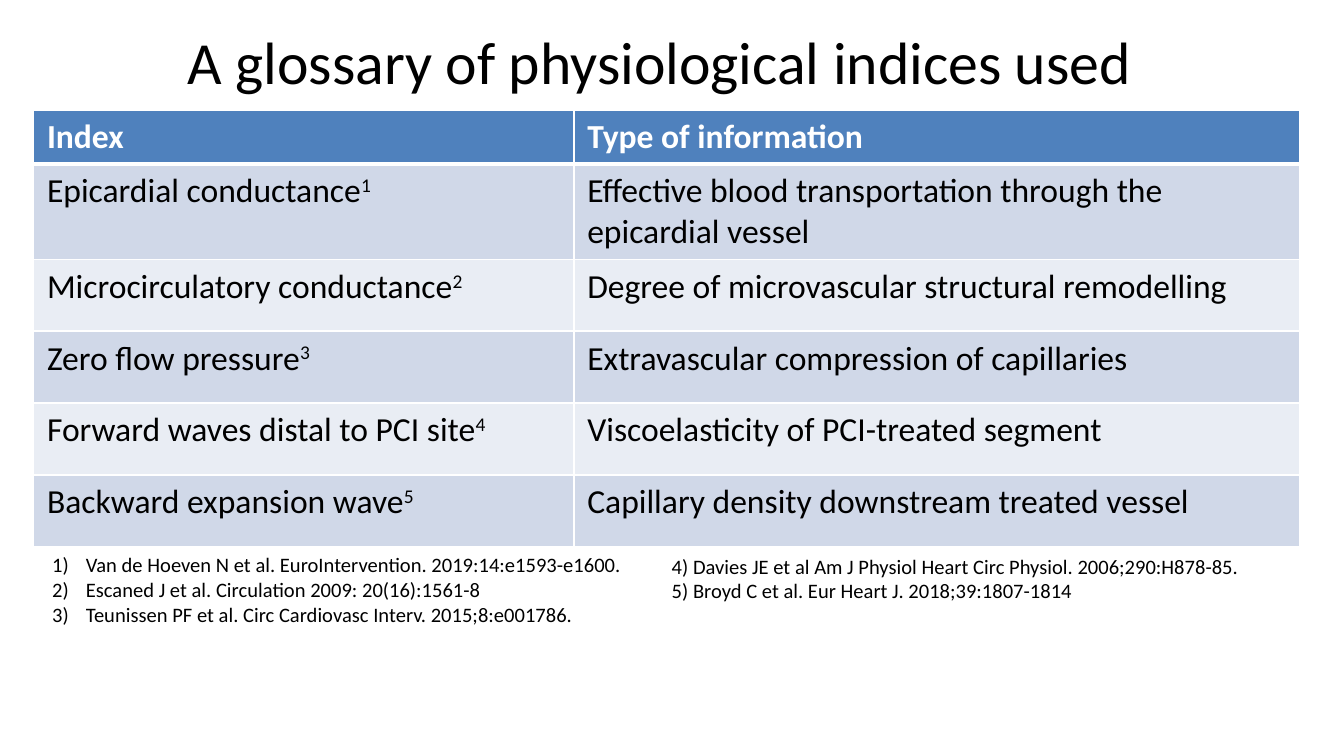
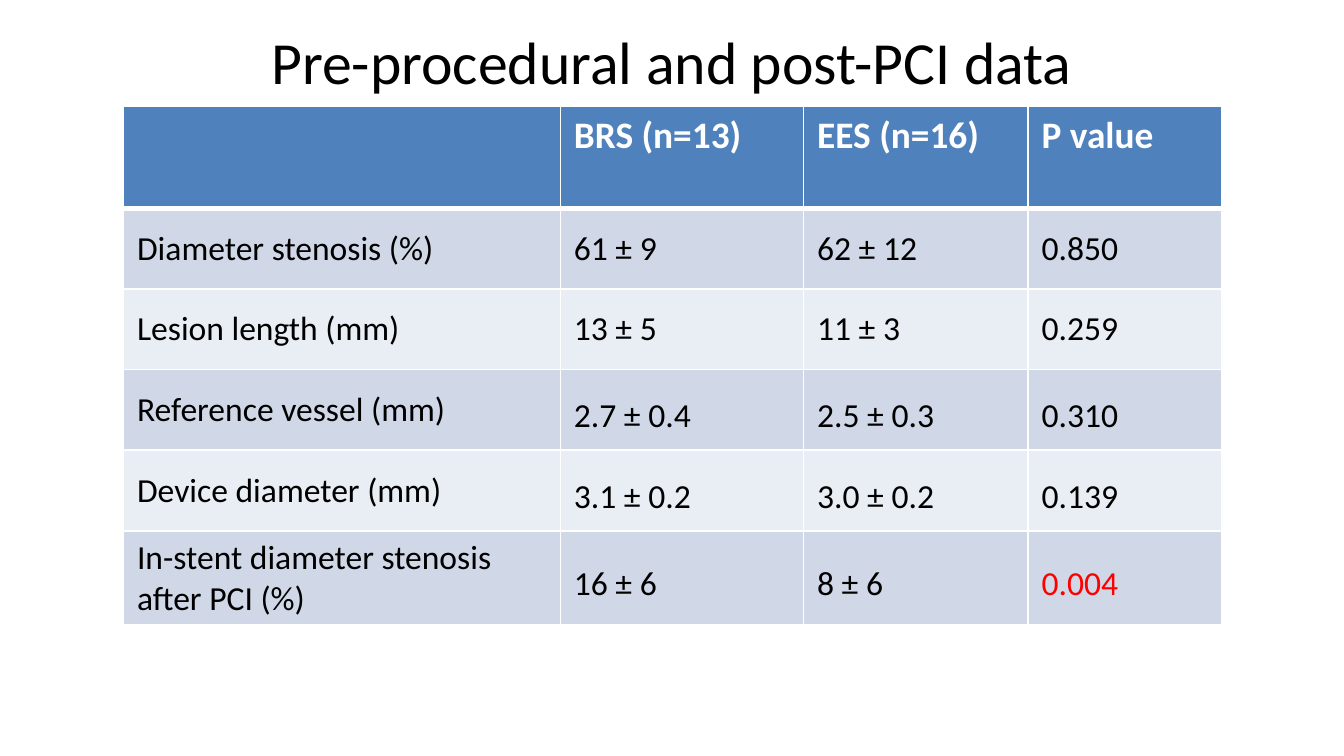
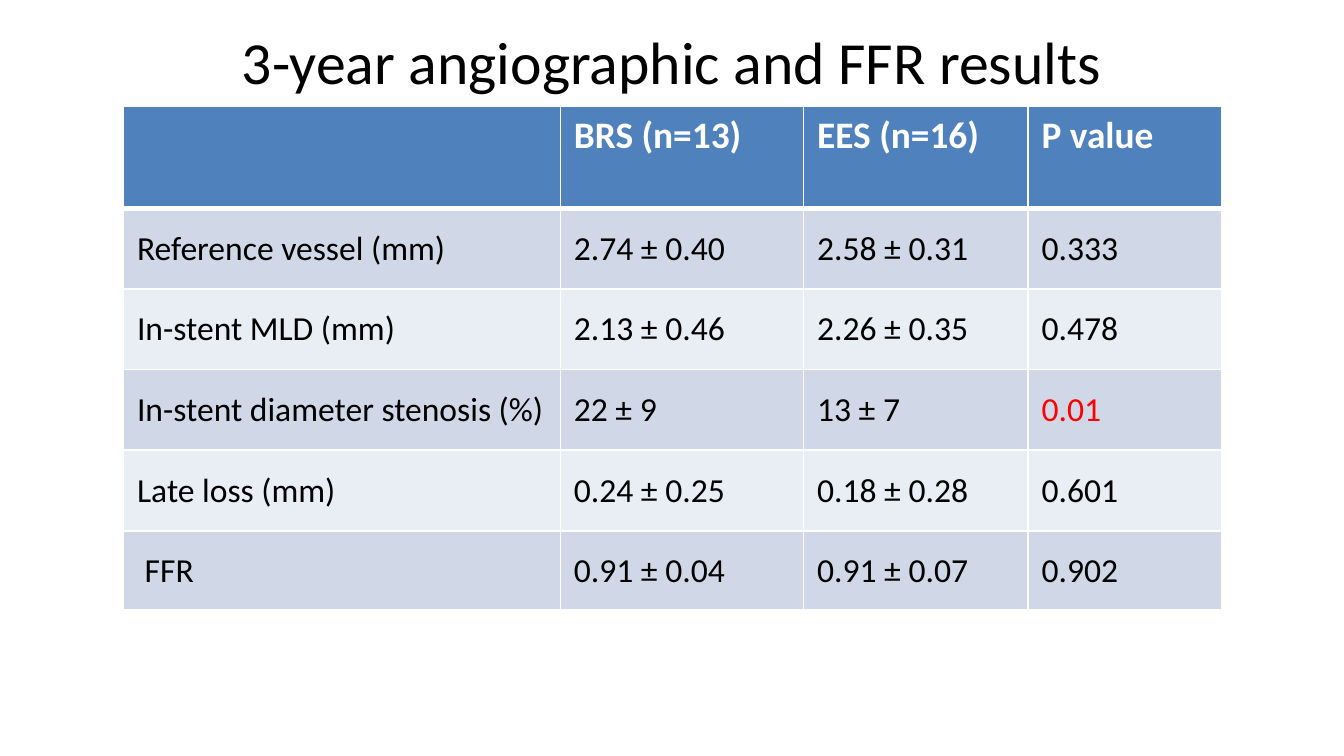
from lxml import etree
from pptx import Presentation
from pptx.dml.color import RGBColor
from pptx.enum import text
from pptx.oxml import ns
from pptx.util import Inches, Pt

COLORS = {"ink": "000000", "paper": "FFFFFF", "header": "4F81BD",
          "band_dark": "D0D8E8", "band_light": "E9EDF4", "significant": "FF0000"}
FONT = "Calibri"
COMPARISON_HEADER = ["", "BRS (n=13)", "EES (n=16)", "P value"]

INDICES = [
    ["Index", "Type of information"],
    ["Epicardial conductance^1",
     "Effective blood transportation through the epicardial vessel"],
    ["Microcirculatory conductance^2", "Degree of microvascular structural remodelling"],
    ["Zero flow pressure^3", "Extravascular compression of capillaries"],
    ["Forward waves distal to PCI site^4", "Viscoelasticity of PCI-treated segment"],
    ["Backward expansion wave^5", "Capillary density downstream treated vessel"],
]
NUMBERED_REFERENCES = [
    "Van de Hoeven N et al. EuroIntervention. 2019:14:e1593-e1600.",
    "Escaned J et al. Circulation 2009: 20(16):1561-8",
    "Teunissen PF et al. Circ Cardiovasc Interv. 2015;8:e001786.",
]
TYPED_REFERENCES = [
    "4) Davies JE et al Am J Physiol Heart Circ Physiol. 2006;290:H878-85.",
    "5) Broyd C et al. Eur Heart J. 2018;39:1807-1814",
]
PROCEDURE = [
    ["Diameter stenosis (%)", "61 ± 9", "62 ± 12", "0.850"],
    ["Lesion length (mm)", "13 ± 5", "11 ± 3", "0.259"],
    ["Reference vessel (mm)", "2.7 ± 0.4", "2.5 ± 0.3", "0.310"],
    ["Device diameter (mm)", "3.1 ± 0.2", "3.0 ± 0.2", "0.139"],
    ["In-stent diameter stenosis after PCI (%)", "16 ± 6", "8 ± 6", "0.004"],
]
THREE_YEARS = [
    ["Reference vessel (mm)", "2.74 ± 0.40", "2.58 ± 0.31", "0.333"],
    ["In-stent MLD (mm)", "2.13 ± 0.46", "2.26 ± 0.35", "0.478"],
    ["In-stent diameter stenosis (%)", "22 ± 9", "13 ± 7", "0.01"],
    ["Late loss (mm)", "0.24 ± 0.25", "0.18 ± 0.28", "0.601"],
    [" FFR", "0.91 ± 0.04", "0.91 ± 0.07", "0.902"],
]


def rgb(name):
    return RGBColor.from_string(COLORS[name])


def style(font, size, color="ink", bold=False):
    font.name, font.size, font.bold = FONT, Pt(size), bold
    font.color.rgb = rgb(color)


def add_title(slide, box, title):
    frame = slide.shapes.add_textbox(*map(Inches, box)).text_frame
    frame.word_wrap = True
    frame.vertical_anchor = text.MSO_ANCHOR.MIDDLE
    frame.text = title
    frame.paragraphs[0].alignment = text.PP_ALIGN.CENTER
    style(frame.paragraphs[0].runs[0].font, 32)


def add_references(slide, box, references, numbered=False):
    frame = slide.shapes.add_textbox(*map(Inches, box)).text_frame
    frame.word_wrap = False
    frame.auto_size = text.MSO_AUTO_SIZE.SHAPE_TO_FIT_TEXT
    frame.text = "\n".join(references)
    for reference in frame.paragraphs:
        if numbered:
            properties = reference._p.get_or_add_pPr()
            properties.set("marL", str(Inches(0.25)))
            properties.set("indent", str(-Inches(0.25)))
            etree.SubElement(properties, ns.qn("a:buAutoNum"), type="arabicParenR")
        style(reference.runs[0].font, 11)


def set_borders(cell, widths):
    """Draw paper-coloured borders; widths are points for left, right, top, bottom."""
    properties = cell._tc.get_or_add_tcPr()
    for side, width in zip("LRTB", widths):
        line = etree.SubElement(properties, ns.qn("a:ln" + side), w=str(Pt(width)))
        fill = etree.SubElement(line, ns.qn("a:solidFill"))
        etree.SubElement(fill, ns.qn("a:srgbClr"), val=COLORS["paper"])


def write_cell(cell, content, size, color, bold):
    """Write content; what follows a caret is superscript."""
    paragraph = cell.text_frame.paragraphs[0]
    if not content:
        style(paragraph.font, size, color, bold)
        return
    for position, part in enumerate(content.split("^")):
        run = paragraph.add_run()
        run.text = part
        style(run.font, size, color, bold)
        if position:
            run.font._element.set("baseline", "30000")


def add_banded_table(slide, origin, widths, heights, rows, header_size):
    left, top = origin
    table = slide.shapes.add_table(
        len(rows), len(widths),
        *map(Inches, (left, top, sum(widths), sum(heights)))).table
    for column, width in zip(table.columns, widths):
        column.width = Inches(width)
    for r, (row, height) in enumerate(zip(rows, heights)):
        table.rows[r].height = Inches(height)
        band = "header" if r == 0 else "band_dark" if r % 2 else "band_light"
        for c, content in enumerate(row):
            cell = table.cell(r, c)
            set_borders(cell, (1, 1, 3 if r == 1 else 1, 3 if r == 0 else 1))
            cell.fill.solid()
            cell.fill.fore_color.rgb = rgb(band)
            if r == 0:
                write_cell(cell, content, header_size, "paper", True)
            else:
                write_cell(cell, content, 18, "ink", False)
    return table


def glossary_slide(slide):
    add_title(slide, (0, -0.02, 9.92, 0.94), "A glossary of physiological indices used ")
    first_heights = [0.39, 0.71]
    other_height = (3.24 - sum(first_heights)) / 4
    add_banded_table(slide, (0.25, 0.82), (4.02, 5.4),
                     first_heights + [other_height] * 4, INDICES, 18)
    add_references(slide, (0.29, 4.06, 4.61, 0.66), NUMBERED_REFERENCES, numbered=True)
    add_references(slide, (4.9, 4.07, 4.43, 0.47), TYPED_REFERENCES)


def comparison_slide(slide, title, measures, last_height, lowered_from=None):
    """Compare both devices; values sit slightly lower from row lowered_from on."""
    rows = [COMPARISON_HEADER] + measures
    table = add_banded_table(slide, (0.92, 0.79), (3.25, 1.81, 1.67, 1.44),
                             [0.76] + [0.6] * 4 + [last_height], rows, 20)
    for r in range(1, len(rows)):
        for c in range(len(COMPARISON_HEADER)):
            cell = table.cell(r, c)
            cell.vertical_anchor = text.MSO_ANCHOR.MIDDLE
            if c and lowered_from and r >= lowered_from:
                cell.margin_top = Inches(0.14)
        if float(rows[r][-1]) < 0.05:
            p_value = table.cell(r, 3).text_frame.paragraphs[0].runs[0]
            p_value.font.color.rgb = rgb("significant")
    add_title(slide, (0.5, -0.02, 9, 0.94), title)


def main():
    deck = Presentation()
    deck.slide_width = Inches(10)
    deck.slide_height = deck.slide_width * 9 // 16
    glossary, procedure, follow_up = (
        deck.slides.add_slide(deck.slide_layouts[6]) for _ in range(3))
    glossary_slide(glossary)
    comparison_slide(procedure, "Pre-procedural and post-PCI data", PROCEDURE, 0.7,
                     lowered_from=3)
    comparison_slide(follow_up, "3-year angiographic and FFR results", THREE_YEARS, 0.59)
    deck.save("out.pptx")


if __name__ == "__main__":
    main()
